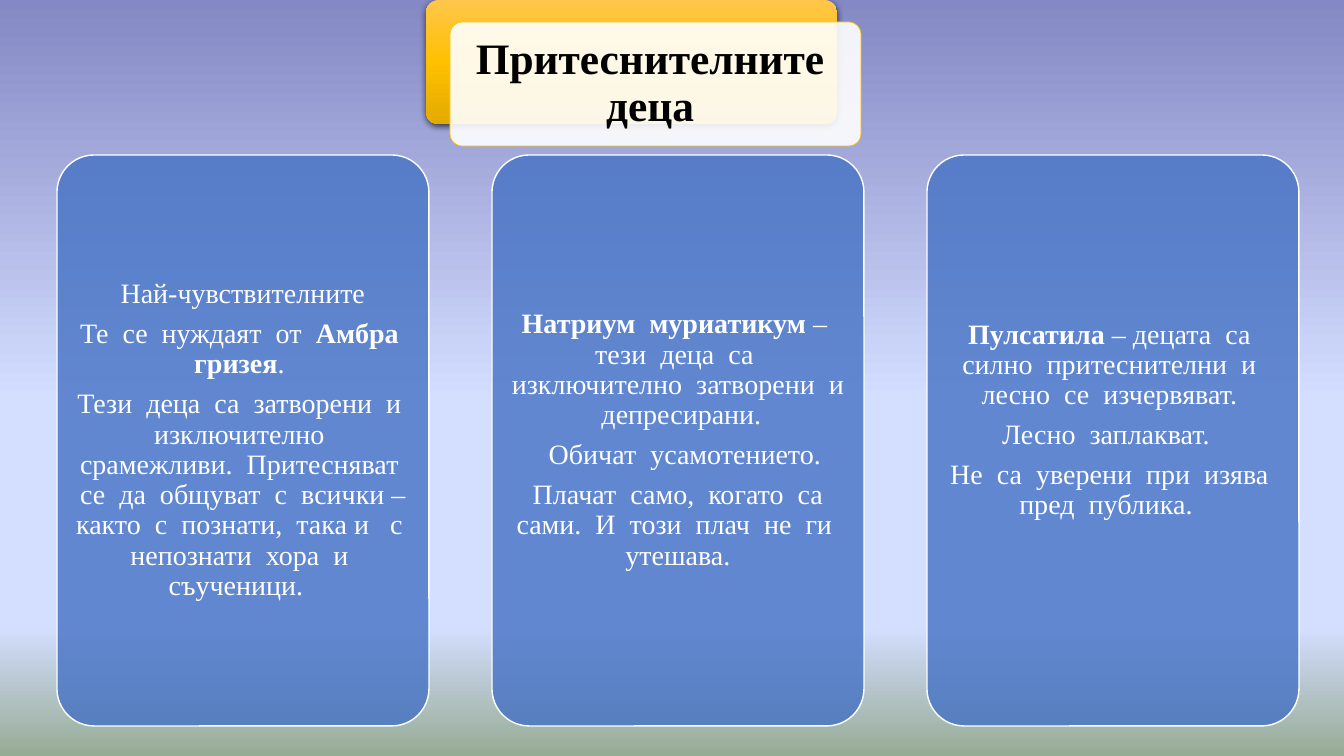
from lxml.etree import SubElement
from pptx import Presentation
from pptx.dml.color import RGBColor
from pptx.enum.shapes import MSO_SHAPE as Shape
from pptx.enum.text import MSO_ANCHOR as Anchor, PP_ALIGN as Align
from pptx.oxml.ns import qn
from pptx.util import Pt

PX = 914400 / 100.8
FONT = "Times New Roman"
rgb = RGBColor.from_string


def gradient(fill, element, stops):
    """Give a fill a top-to-bottom gradient of (percent, colour) stops."""
    fill.gradient()
    fill.gradient_angle = 270
    stop_list = next(element.iter(qn("a:gsLst")))
    for old_stop in list(stop_list):
        stop_list.remove(old_stop)
    for percent, colour in stops:
        stop = SubElement(stop_list, qn("a:gs"), pos=str(percent * 1000))
        SubElement(stop, qn("a:srgbClr"), val=colour)


def panel(box, colour, opacity, line_colour, line_width, inset, size, paragraphs):
    """Add a translucent rounded panel holding paragraphs of (text, bold) runs."""
    shape = slide.shapes.add_shape(Shape.ROUNDED_RECTANGLE, *[round(n * PX) for n in box])
    shape.adjustments[0] = 0.1
    shape.shadow.inherit = False
    shape.fill.solid()
    shape.fill.fore_color.rgb = rgb(colour)
    tint = next(shape.element.spPr.iter(qn("a:srgbClr")))
    SubElement(tint, qn("a:alpha"), val=str(opacity * 1000))
    shape.line.color.rgb = rgb(line_colour)
    shape.line.width = Pt(line_width)

    frame = shape.text_frame
    frame.word_wrap = True
    frame.vertical_anchor = Anchor.MIDDLE
    frame.margin_left = frame.margin_right = round(inset * PX)
    frame.margin_top = frame.margin_bottom = round(inset * PX)
    for i, runs in enumerate(paragraphs):
        paragraph = frame.add_paragraph() if i else frame.paragraphs[0]
        paragraph.alignment = Align.CENTER
        paragraph.line_spacing = 0.9
        paragraph.space_after = Pt(round(size * 0.35))
        for text, bold in runs:
            run = paragraph.add_run()
            run.text = text
            run.font.name = FONT
            run.font.size = Pt(size)
            run.font.bold = bold
            run.font.color.rgb = rgb("000000" if colour == "FFFFFF" else "FFFFFF")
    return frame


deck = Presentation()
deck.slide_width, deck.slide_height = round(1344 * PX), round(756 * PX)
slide = deck.slides.add_slide(deck.slide_layouts[6])

# Background
gradient(slide.background.fill, slide.element,
         [(0, "8488C4"), (53, "D4DEFF"), (83, "D4DEFF"), (100, "96AB94")])

# Gold plate behind the title, with its shadow
plate = slide.shapes.add_shape(Shape.ROUNDED_RECTANGLE, 0, 0, round(411 * PX), round(124 * PX))
plate.left = round(426 * PX)
plate.adjustments[0] = 0.1
gradient(plate.fill, plate.element, [(0, "FFC64B"), (50, "FFC000"), (100, "E3AB00")])
plate.line.fill.background()
plate.shadow.inherit = False
effects = plate.element.spPr.find(qn("a:effectLst"))
shadow = SubElement(effects, qn("a:outerShdw"), blurRad=str(Pt(4.5)), dist=str(Pt(1.5)),
                    dir="5400000", algn="ctr", rotWithShape="0")
shade = SubElement(shadow, qn("a:srgbClr"), val="000000")
SubElement(shade, qn("a:alpha"), val="63000")

# Title
panel((450, 22, 411, 124), "FFFFFF", 90, "FFC000", 0.5, 13, 31,
      [[("Притеснителните  деца ", True)]])

# Three remedy cards
remedies = [
    [
        [("Най-чувствителните", False)],
        [("Те  се  нуждаят  от  ", False), ("Амбра  гризея", True), (". ", False)],
        [("Тези  деца  са  затворени  и  изключително  срамежливи.  Притесняват  се  да  "
          "общуват  с  всички – както  с  познати,  така и   с  непознати  хора  и  "
          "съученици.  ", False)],
    ],
    [
        [("Натриум  муриатикум ", True),
         ("–  тези  деца  са  изключително  затворени  и  депресирани.", False)],
        [("  Обичат  усамотението.", False)],
        [(" Плачат  само,  когато  са  сами.  И  този  плач  не  ги  утешава.", False)],
    ],
    [
        [("Пулсатила ", True),
         ("– децата  са  силно  притеснителни  и  лесно  се  изчервяват. ", False)],
        [("Лесно  заплакват.  ", False)],
        [("Не  са  уверени  при  изява  пред  публика.  ", False)],
    ],
]
for column, remedy in enumerate(remedies):
    card_text = panel((57 + 435 * column, 155, 372, 571), "4472C4", 80, "FFFFFF", 1, 8, 20, remedy)
# The last card's text sits a little above the middle
card_text.margin_bottom = round(48 * PX)

deck.save("out.pptx")
